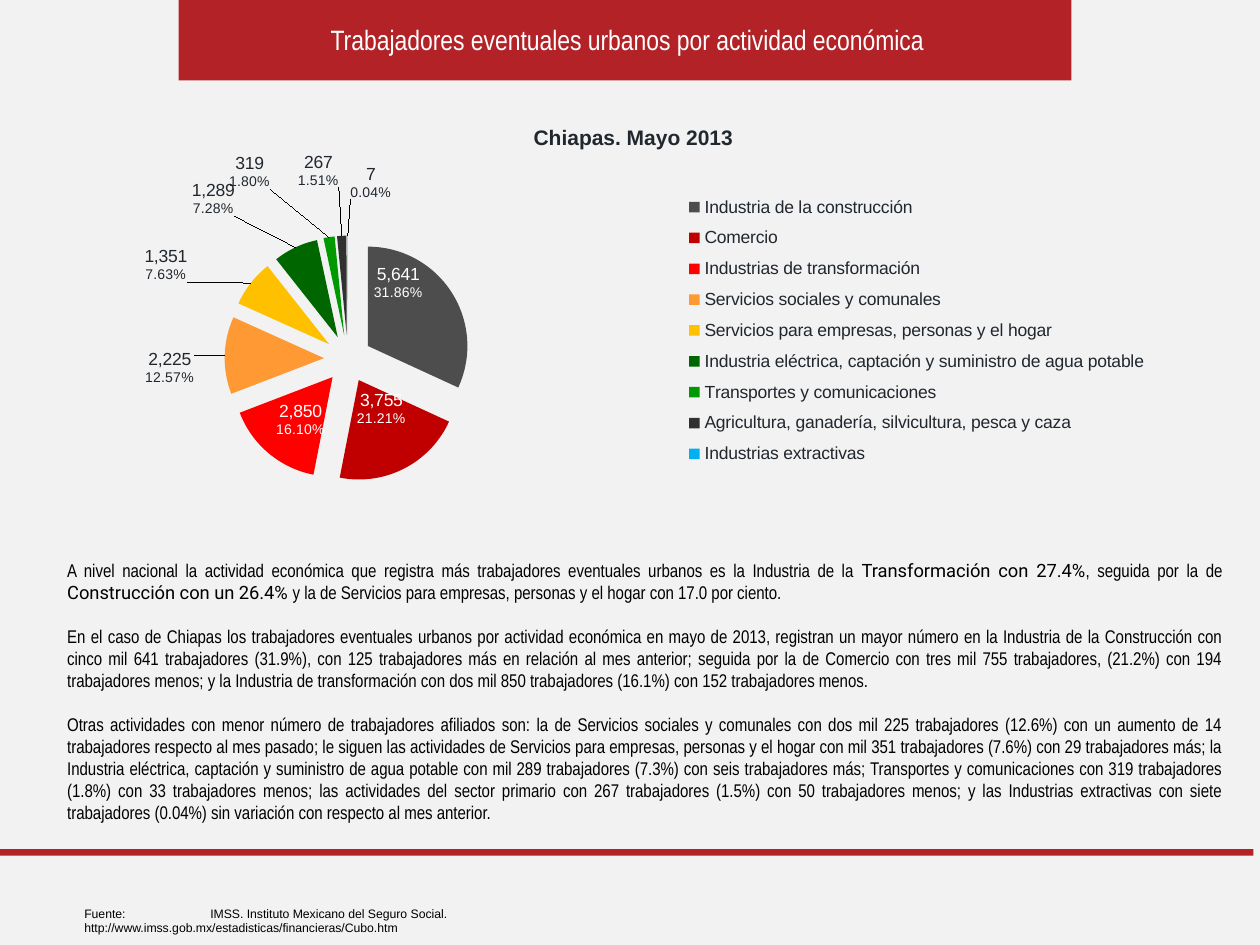
from dataclasses import dataclass
from typing import NamedTuple

from lxml.etree import SubElement
from pptx import Presentation
from pptx.chart.data import CategoryChartData
from pptx.dml.color import RGBColor
from pptx.enum.chart import XL_CHART_TYPE, XL_LABEL_POSITION, XL_LEGEND_POSITION
from pptx.enum.shapes import MSO_SHAPE
from pptx.enum.text import MSO_ANCHOR, MSO_AUTO_SIZE, PP_ALIGN
from pptx.oxml import parse_xml
from pptx.oxml.ns import nsdecls, qn
from pptx.util import Cm, Pt


@dataclass(frozen=True)
class Theme:
    """Colours, fonts and type sizes of the slide."""
    paper: str = "F2F2F2"
    accent: str = "B22227"
    ink: str = "000000"
    chart_ink: str = "21272E"
    white: str = "FFFFFF"
    narrow: str = "Arial Narrow"
    plain: str = "Arial"
    stress: str = "Roboto"
    title_size: float = 16
    chart_title_size: float = 12
    body_size: float = 10.5
    chart_size: float = 10
    percent_size: float = 8
    source_size: float = 7
    paragraph_gap: float = 12.5


class Box(NamedTuple):
    """A rectangle in centimetres."""
    left: float
    top: float
    width: float
    height: float

    def inner(self, left, top, width, height):
        """Return a box whose place is relative to this one."""
        return Box(self.left + left, self.top + top, width, height)

    def lengths(self):
        """Return the four lengths for python-pptx."""
        return [Cm(value) for value in self]


class Activity(NamedTuple):
    """One pie slice with the shift of its label."""
    name: str
    workers: int
    colour: str
    share: str
    shift: tuple
    inside: bool = False


THEME = Theme()
ACTIVITIES = [
    Activity("Industria de la construcción", 5641, "4D4D4D", "31.86%", (-0.01, -0.09), True),
    Activity("Comercio", 3755, "C00000", "21.21%", (0, -0.04), True),
    Activity("Industrias de transformación", 2850, "FF0000", "16.10%", (0, 0.01), True),
    Activity("Servicios sociales y comunales", 2225, "FF9933", "12.57%", (-0.02, 0.03)),
    Activity("Servicios para empresas, personas y el hogar", 1351, "FFC000", "7.63%", (-0.05, 0.01)),
    Activity("Industria eléctrica, captación y suministro de agua potable", 1289, "006600", "7.28%", (-0.05, -0.06)),
    Activity("Transportes y comunicaciones", 319, "009900", "1.80%", (-0.05, -0.1)),
    Activity("Agricultura, ganadería, silvicultura, pesca y caza", 267, "303030", "1.51%", (-0.02, -0.1)),
    Activity("Industrias extractivas", 7, "00B0F0", "0.04%", (0.02, -0.07)),
]
PARAGRAPHS = [
    [
        ("A nivel nacional la actividad económica que registra más trabajadores eventuales urbanos es la Industria de la ", THEME.narrow),
        ("Transformación con 27.4%", THEME.stress),
        (", seguida por la de ", THEME.narrow),
        ("Construcción con un 26.4% ", THEME.stress),
        ("y la de Servicios para empresas, personas y el hogar con 17.0 por ciento.", THEME.narrow),
    ],
    [("En el caso de Chiapas los trabajadores eventuales urbanos por actividad económica en mayo de 2013, registran un mayor número en la Industria de la Construcción con cinco mil 641 trabajadores (31.9%), con 125 trabajadores más en relación al mes anterior; seguida por la de Comercio con tres mil 755 trabajadores, (21.2%) con 194 trabajadores menos; y la Industria de transformación con dos mil 850 trabajadores (16.1%) con 152 trabajadores menos.", THEME.narrow)],
    [("Otras actividades con menor número de trabajadores afiliados son: la de Servicios sociales y comunales con dos mil 225 trabajadores (12.6%) con un aumento de 14 trabajadores respecto al mes pasado; le siguen las actividades de Servicios para empresas, personas y el hogar con mil 351 trabajadores (7.6%) con 29 trabajadores más; la Industria eléctrica, captación y suministro de agua potable con mil 289 trabajadores (7.3%) con seis trabajadores más; Transportes y comunicaciones con 319 trabajadores (1.8%) con 33 trabajadores menos; las actividades del sector primario con 267 trabajadores (1.5%) con 50 trabajadores menos; y las Industrias extractivas con siete trabajadores (0.04%) sin variación con respecto al mes anterior.", THEME.narrow)],
]


def write(para, text, font=THEME.plain, size=THEME.chart_size, colour=THEME.ink, bold=False):
    """Add a formatted span of text to a paragraph."""
    span = para.add_run()
    span.text = text
    span.font.name, span.font.size, span.font.bold = font, Pt(size), bold
    span.font.color.rgb = RGBColor.from_string(colour)


def next_paragraph(frame, index):
    """Return the first paragraph of a frame or a new one."""
    return frame.add_paragraph() if index else frame.paragraphs[0]


def place(shape, box):
    """Move a placeholder to a box."""
    shape.left, shape.top, shape.width, shape.height = box.lengths()


def add_band(page, box):
    """Draw an accent band behind the other objects."""
    band = page.shapes.add_shape(MSO_SHAPE.RECTANGLE, *box.lengths())
    band.shadow.inherit = False
    band.fill.solid()
    band.fill.fore_color.rgb = RGBColor.from_string(THEME.accent)
    band.line.fill.background()
    band.element.getparent().insert(2, band.element)


def set_layout(parent, position, **values):
    """Give a chart part a manual layout."""
    for old in parent.findall(qn("c:layout")):
        parent.remove(old)
    entries = "".join(f'<c:{key} val="{value}"/>' for key, value in values.items())
    parent.insert(position, parse_xml(
        f'<c:layout {nsdecls("c")}><c:manualLayout>{entries}</c:manualLayout></c:layout>'))


def add_header(page, box):
    """Place the title on its accent band."""
    add_band(page, box)
    title = page.shapes.title
    place(title, box.inner(0.1, 0.33, 17.9, 0.94))
    title.text_frame.auto_size = MSO_AUTO_SIZE.NONE
    title.text_frame.vertical_anchor = MSO_ANCHOR.MIDDLE
    para = title.text_frame.paragraphs[0]
    para.alignment = PP_ALIGN.CENTER
    write(para, "Trabajadores eventuales urbanos por actividad económica",
          font=THEME.narrow, size=THEME.title_size, colour=THEME.white)


def format_slice(point, activity):
    """Colour a pie slice and write its label."""
    point.format.fill.solid()
    point.format.fill.fore_color.rgb = RGBColor.from_string(activity.colour)
    label = point.data_label
    colour = THEME.white if activity.inside else THEME.chart_ink
    lines = [(f"{activity.workers:,}", THEME.chart_size), (activity.share, THEME.percent_size)]
    for index, (text, size) in enumerate(lines):
        write(next_paragraph(label.text_frame, index), text, size=size, colour=colour)
    label.position = XL_LABEL_POSITION.CENTER if activity.inside else XL_LABEL_POSITION.OUTSIDE_END
    holder = label.text_frame._txBody.getparent().getparent()
    set_layout(holder, 1, x=activity.shift[0], y=activity.shift[1])


def add_pie(page, box):
    """Chart the workers of each activity."""
    data = CategoryChartData(number_format="#,##0")
    data.categories = [activity.name for activity in ACTIVITIES]
    data.add_series("Series 1", [activity.workers for activity in ACTIVITIES])
    chart = page.shapes.add_chart(XL_CHART_TYPE.PIE, *box.lengths(), data).chart
    chart.font.name, chart.font.size = THEME.plain, Pt(THEME.chart_size)
    chart.font.color.rgb = RGBColor.from_string(THEME.chart_ink)
    chart.has_title = True
    write(chart.chart_title.text_frame.paragraphs[0], "Chiapas. Mayo 2013",
          size=THEME.chart_title_size, colour=THEME.chart_ink, bold=True)
    set_layout(chart.chart_title._element, 1, xMode="edge", yMode="edge", x=0.41, y=0.05)
    chart.has_legend = True
    chart.legend.position = XL_LEGEND_POSITION.RIGHT
    chart.legend.include_in_layout = False
    set_layout(chart.legend._element, 1, xMode="edge", yMode="edge", x=0.53, y=0.21, w=0.43, h=0.71)
    plot = chart.plots[0]
    plot.vary_by_categories = True
    set_layout(plot._element.getparent(), 0, layoutTarget="inner", xMode="edge", yMode="edge",
               x=0.005, y=0.332, w=0.495, h=0.606)
    series = plot.series[0]
    labels = series.data_labels
    labels.show_value = labels.show_percentage = True
    labels.number_format, labels.number_format_is_linked = "0.00%", False
    for index, activity in enumerate(ACTIVITIES):
        format_slice(series.points[index], activity)
    explosion = parse_xml(f'<c:explosion {nsdecls("c")} val="24"/>')
    series._element.find(qn("c:dPt")).addprevious(explosion)


def add_commentary(page, box):
    """Fill the body placeholder with justified paragraphs."""
    body = page.placeholders[1]
    place(body, box)
    frame = body.text_frame
    frame.auto_size = MSO_AUTO_SIZE.NONE
    frame.vertical_anchor = MSO_ANCHOR.MIDDLE
    for index, spans in enumerate(PARAGRAPHS):
        para = next_paragraph(frame, index)
        properties = para._p.get_or_add_pPr()
        properties.set("marL", "0")
        properties.set("indent", "0")
        SubElement(properties, qn("a:buNone"))
        para.alignment = PP_ALIGN.JUSTIFY
        para.space_before = Pt(THEME.paragraph_gap if index else 0)
        for text, font in spans:
            write(para, text, font=font, size=THEME.body_size)


def add_source(page, box):
    """Write the source below its accent rule."""
    add_band(page, box.inner(0, 0, box.width, 0.13))
    frame = page.shapes.add_textbox(*box.inner(1.45, 1.02, 12.9, 0.56).lengths()).text_frame
    frame.word_wrap = False
    para = frame.paragraphs[0]
    tabs = SubElement(para._p.get_or_add_pPr(), qn("a:tabLst"))
    SubElement(tabs, qn("a:tab"), pos=str(Cm(2.54)), algn="l")
    write(para, "Fuente:\tIMSS. Instituto Mexicano del Seguro Social.", size=THEME.source_size)
    para.add_line_break()
    write(para, "http://www.imss.gob.mx/estadisticas/financieras/Cubo.htm", size=THEME.source_size)


def main():
    """Build the deck and save it."""
    deck = Presentation()
    deck.slide_width, deck.slide_height = Cm(25.4), Cm(19.05)
    page = deck.slides.add_slide(deck.slide_layouts[1])
    page.background.fill.solid()
    page.background.fill.fore_color.rgb = RGBColor.from_string(THEME.paper)
    add_header(page, Box(3.6, 0, 18, 1.62))
    add_pie(page, Box(1.14, 2.03, 23.27, 8.2))
    add_commentary(page, Box(1.1, 10.74, 23.8, 6.38))
    add_source(page, Box(0, 17.12, 25.27, 1.93))
    deck.save("out.pptx")


if __name__ == "__main__":
    main()
